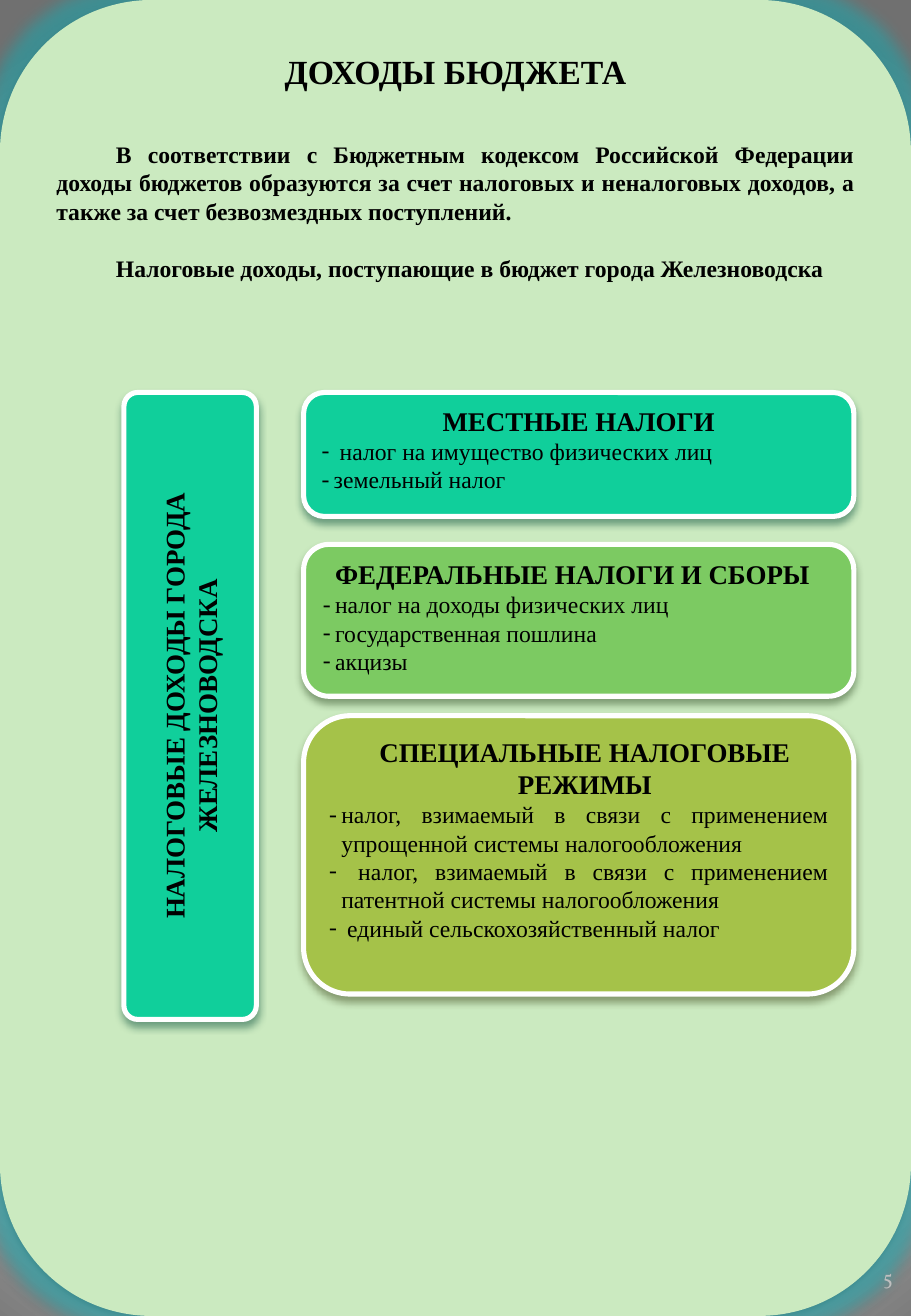
from pptx import Presentation
from pptx.dml.color import RGBColor
from pptx.enum import shapes, text
from pptx.oxml import parse_xml
from pptx.oxml.ns import nsdecls, qn
from pptx.util import Inches, Pt

BLACK = RGBColor(0x00, 0x00, 0x00)
WHITE = RGBColor(0xFF, 0xFF, 0xFF)
PAGE_GREEN = RGBColor(0xCB, 0xEA, 0xC0)
GLOW_TEAL = RGBColor(0x0B, 0xD0, 0xD9)
EMERALD = RGBColor(0x10, 0xCF, 0x9B)
EMERALD_SHADE = RGBColor(0x04, 0x4A, 0x37)
GREEN = RGBColor(0x7C, 0xCA, 0x62)
GREEN_SHADE = RGBColor(0x2B, 0x48, 0x21)
OLIVE = RGBColor(0xA5, 0xC2, 0x49)
OLIVE_SHADE = RGBColor(0x3A, 0x45, 0x19)
CORNER_GREY = RGBColor(0x70, 0x70, 0x70)
NUMBER_GREY = RGBColor(0xBF, 0xBF, 0xBF)
LEFT, CENTER, RIGHT, JUSTIFY = (text.PP_ALIGN.LEFT, text.PP_ALIGN.CENTER,
                                text.PP_ALIGN.RIGHT, text.PP_ALIGN.JUSTIFY)


def write(frame, words, size=14, bold=False, color=BLACK, font="Times New Roman",
          align=LEFT, before=0, margin=0, indent=0, bullet=None):
    line = frame.add_paragraph() if frame.text else frame.paragraphs[0]
    props = line._p.get_or_add_pPr()
    props.set("marL", str(Inches(margin)))
    props.set("indent", str(Inches(indent)))
    line.alignment = align
    if before:
        line.space_before = Pt(before)
    if bullet:
        props.append(parse_xml(f'<a:buFont {nsdecls("a")} typeface="{font}"/>'))
        props.append(parse_xml(f'<a:buChar {nsdecls("a")} char="{bullet}"/>'))
    run = line.add_run()
    run.text = words
    run.font.size = Pt(size)
    run.font.bold = bold
    run.font.name = font
    run.font.color.rgb = color


def panel(left, top, width, height, fill, shade, alpha, blur, distance, border=None):
    box = slide.shapes.add_shape(shapes.MSO_SHAPE.ROUNDED_RECTANGLE, Inches(left),
                                 Inches(top), Inches(width), Inches(height))
    box.fill.solid()
    box.fill.fore_color.rgb = fill
    if border:
        box.line.color.rgb = border
        box.line.width = Pt(3)
    else:
        box.line.fill.background()
    box.shadow.inherit = False
    box._element.spPr.find(qn("a:effectLst")).append(parse_xml(
        f'<a:outerShdw {nsdecls("a")} blurRad="{Pt(blur)}" dist="{Pt(distance)}" '
        f'dir="5400000" rotWithShape="0"><a:srgbClr val="{shade}">'
        f'<a:alpha val="{alpha * 1000}"/></a:srgbClr></a:outerShdw>'))
    box.text_frame.word_wrap = True
    box.text_frame.vertical_anchor = text.MSO_ANCHOR.TOP
    return box


deck = Presentation()
deck.slide_width, deck.slide_height = Inches(7.5), Inches(10.83)
slide = deck.slides.add_slide(deck.slide_layouts[6])

slide.background.fill.gradient()
gradient = slide.background._cSld.find(".//" + qn("a:gradFill"))
gradient.getparent().replace(gradient, parse_xml(
    f'<a:gradFill {nsdecls("a")} rotWithShape="1"><a:gsLst>'
    f'<a:gs pos="0"><a:srgbClr val="{WHITE}"/></a:gs>'
    f'<a:gs pos="25000"><a:srgbClr val="{WHITE}"/></a:gs>'
    f'<a:gs pos="100000"><a:srgbClr val="{CORNER_GREY}"/></a:gs></a:gsLst>'
    '<a:path path="circle">'
    '<a:fillToRect l="10000" t="110000" r="10000" b="100000"/></a:path></a:gradFill>'))

page = panel(0, 0, 7.5, 10.83, PAGE_GREEN, BLACK, 32, 3.5, 2.2)
page._element.spPr.find(qn("a:effectLst")).insert(0, parse_xml(
    f'<a:glow {nsdecls("a")} rad="{Pt(18)}"><a:srgbClr val="{GLOW_TEAL}">'
    '<a:alpha val="40000"/></a:srgbClr></a:glow>'))
write(page.text_frame, "ДОХОДЫ БЮДЖЕТА", size=20, bold=True, align=CENTER)
write(page.text_frame,
      "В соответствии с Бюджетным кодексом Российской Федерации доходы бюджетов "
      "образуются за счет налоговых и неналоговых доходов, а также за счет "
      "безвозмездных поступлений.",
      bold=True, align=JUSTIFY, before=29, indent=0.49)
write(page.text_frame, "Налоговые доходы, поступающие в бюджет города Железноводска",
      bold=True, align=JUSTIFY, before=17, indent=0.49)

city_revenue = panel(1.02, 3.23, 1.09, 5.16, EMERALD, EMERALD_SHADE, 48, 4.5, 3, WHITE)
city_revenue.adjustments[0] = 0.105
city_revenue.text_frame.vertical_anchor = text.MSO_ANCHOR.MIDDLE
city_revenue.text_frame._txBody.bodyPr.set("vert", "vert270")
write(city_revenue.text_frame, "НАЛОГОВЫЕ ДОХОДЫ ГОРОДА ЖЕЛЕЗНОВОДСКА",
      size=16, bold=True, align=CENTER)

tax_groups = [
    (3.23, 1.02, EMERALD, EMERALD_SHADE, "МЕСТНЫЕ НАЛОГИ", CENTER, 0, LEFT,
     [" налог на имущество физических лиц", "земельный налог"]),
    (4.48, 1.25, GREEN, GREEN_SHADE, "ФЕДЕРАЛЬНЫЕ НАЛОГИ И СБОРЫ", LEFT, 0.1, JUSTIFY,
     ["налог на доходы физических лиц", "государственная пошлина", "акцизы"]),
    (5.89, 2.29, OLIVE, OLIVE_SHADE, "СПЕЦИАЛЬНЫЕ НАЛОГОВЫЕ РЕЖИМЫ", CENTER, 0.1, JUSTIFY,
     ["налог, взимаемый в связи с применением упрощенной системы налогообложения",
      " налог, взимаемый в связи с применением патентной системы налогообложения",
      " единый сельскохозяйственный налог"]),
]
for top, height, fill, shade, heading, align, margin, tax_align, taxes in tax_groups:
    group = panel(2.5, top, 4.53, height, fill, shade, 48, 4.5, 3, WHITE)
    write(group.text_frame, heading, size=16, bold=True, align=align, margin=margin)
    for tax in taxes:
        write(group.text_frame, tax, align=tax_align, margin=0.1, indent=-0.1, bullet="-")

page_number = slide.shapes.add_textbox(Inches(6.92), Inches(10.03),
                                       Inches(0.43), Inches(0.58)).text_frame
page_number.word_wrap = True
page_number.vertical_anchor = text.MSO_ANCHOR.BOTTOM
page_number.margin_left = page_number.margin_right = 0
page_number.margin_top = page_number.margin_bottom = 0
write(page_number, "5", size=12, color=NUMBER_GREY, font="Vollkorn", align=RIGHT)

deck.save("out.pptx")
